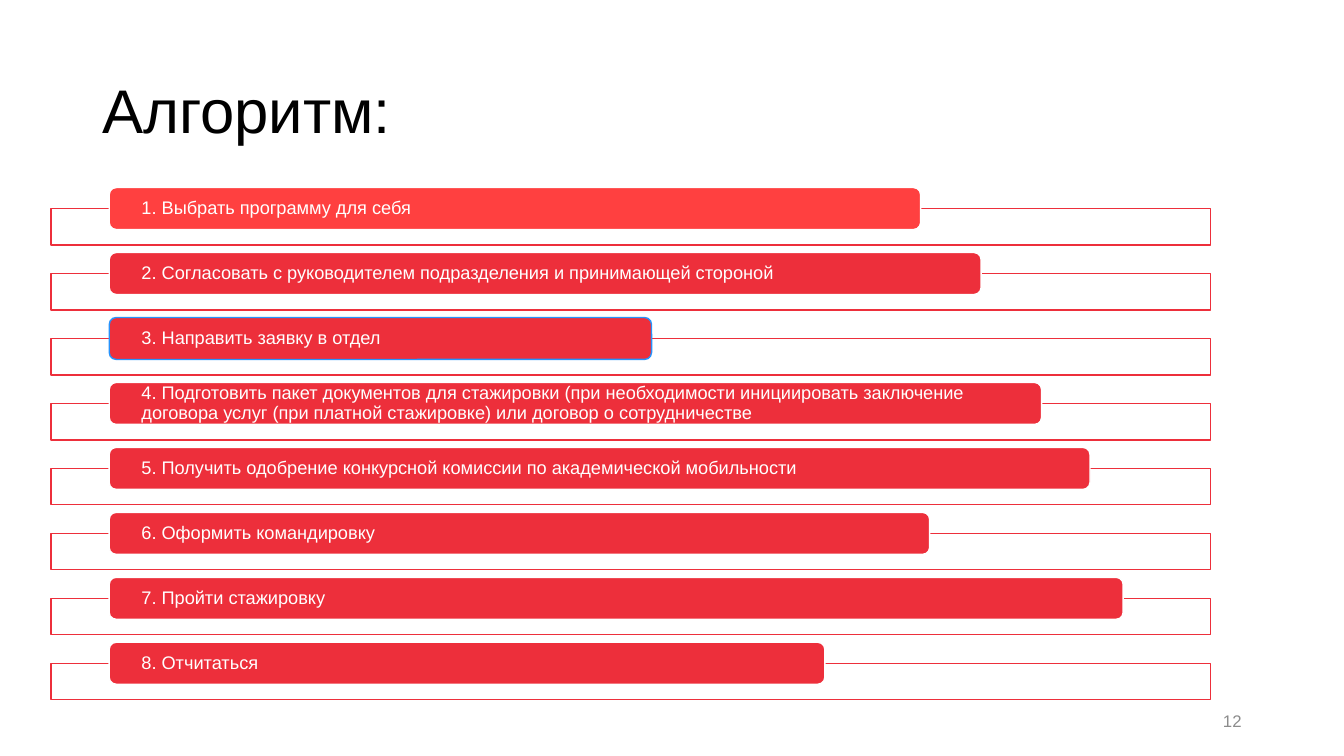
from lxml import etree
from pptx import Presentation
from pptx.dml.color import RGBColor
from pptx.enum.shapes import MSO_SHAPE
from pptx.enum.text import MSO_ANCHOR, PP_ALIGN
from pptx.oxml.ns import qn
from pptx.util import Pt

BLACK = RGBColor(0x00, 0x00, 0x00)
WHITE = RGBColor(0xFF, 0xFF, 0xFF)
GRAY = RGBColor(0x8C, 0x8C, 0x8C)
RED = RGBColor(0xED, 0x2F, 0x3B)
LIGHT_RED = RGBColor(0xFF, 0x40, 0x40)
BLUE = RGBColor(0x27, 0x93, 0xFC)

TITLE = "Алгоритм:"
PAGE_NUMBER = "12"
STEPS = [
    ("1. Выбрать программу для себя", 579.6, LIGHT_RED, WHITE),
    ("2. Согласовать с руководителем подразделения и принимающей стороной", 622.8, RED, WHITE),
    ("3. Направить заявку в отдел", 387.4, RED, BLUE),
    ("4. Подготовить пакет документов для стажировки (при необходимости инициировать "
     "заключение договора услуг (при платной стажировке) или договор о сотрудничестве",
     666, RED, WHITE),
    ("5. Получить одобрение конкурсной комиссии по академической мобильности", 700.6, RED, WHITE),
    ("6. Оформить командировку", 586.1, RED, WHITE),
    ("7. Пройти стажировку", 724.3, RED, WHITE),
    ("8. Отчитаться", 511.2, RED, WHITE),
]

FONT = "Arial"
FIRST_BAR_TOP = 134
STEP_PITCH = 46.4
BAR_LEFT, BAR_HEIGHT = 78, 30
FRAME_LEFT, FRAME_WIDTH, FRAME_HEIGHT = 36.6, 828, 26
FRAME_OPACITY = 90
BAR_INSET = 21.6


def write_text(shape, text, size, color, align=PP_ALIGN.LEFT, line_spacing=1.0):
    text_frame = shape.text_frame
    text_frame.text = text
    text_frame.word_wrap = True
    text_frame.vertical_anchor = MSO_ANCHOR.MIDDLE
    paragraph = text_frame.paragraphs[0]
    paragraph.alignment = align
    paragraph.line_spacing = line_spacing
    font = paragraph.runs[0].font
    font.name = FONT
    font.size = Pt(size)
    font.color.rgb = color


def add_box(shapes, kind, left, top, width, height, fill, line):
    shape = shapes.add_shape(kind, Pt(left), Pt(top), Pt(width), Pt(height))
    shape.shadow.inherit = False
    shape.fill.solid()
    shape.fill.fore_color.rgb = fill
    shape.line.color.rgb = line
    shape.line.width = Pt(1)
    return shape


def set_opacity(shape, percent):
    color = shape.fill._xPr.find(qn("a:solidFill"))[0]
    etree.SubElement(color, qn("a:alpha")).set("val", str(percent * 1000))


def add_step(shapes, index, text, width, fill, line):
    top = FIRST_BAR_TOP + index * STEP_PITCH
    frame = add_box(shapes, MSO_SHAPE.RECTANGLE, FRAME_LEFT, top + BAR_HEIGHT / 2,
                    FRAME_WIDTH, FRAME_HEIGHT, WHITE, RED)
    set_opacity(frame, FRAME_OPACITY)
    bar = add_box(shapes, MSO_SHAPE.ROUNDED_RECTANGLE, BAR_LEFT, top,
                  width, BAR_HEIGHT, fill, line)
    write_text(bar, text, 13, WHITE, line_spacing=0.9)
    text_frame = bar.text_frame
    text_frame.margin_left = text_frame.margin_right = Pt(BAR_INSET)
    text_frame.margin_top = text_frame.margin_bottom = Pt(0)


def main():
    presentation = Presentation()
    presentation.slide_width = Pt(960)
    presentation.slide_height = Pt(540)
    slide = presentation.slides.add_slide(presentation.slide_layouts[6])

    title = slide.shapes.add_textbox(Pt(66), Pt(28.8), Pt(828), Pt(104.4))
    write_text(title, TITLE, 44, BLACK, line_spacing=0.9)

    steps = slide.shapes.add_group_shape()
    for index, step in enumerate(STEPS):
        add_step(steps.shapes, index, *step)

    number = slide.shapes.add_textbox(Pt(678), Pt(500.5), Pt(216), Pt(28.8))
    write_text(number, PAGE_NUMBER, 12, GRAY, PP_ALIGN.RIGHT)

    presentation.save("out.pptx")


if __name__ == "__main__":
    main()
